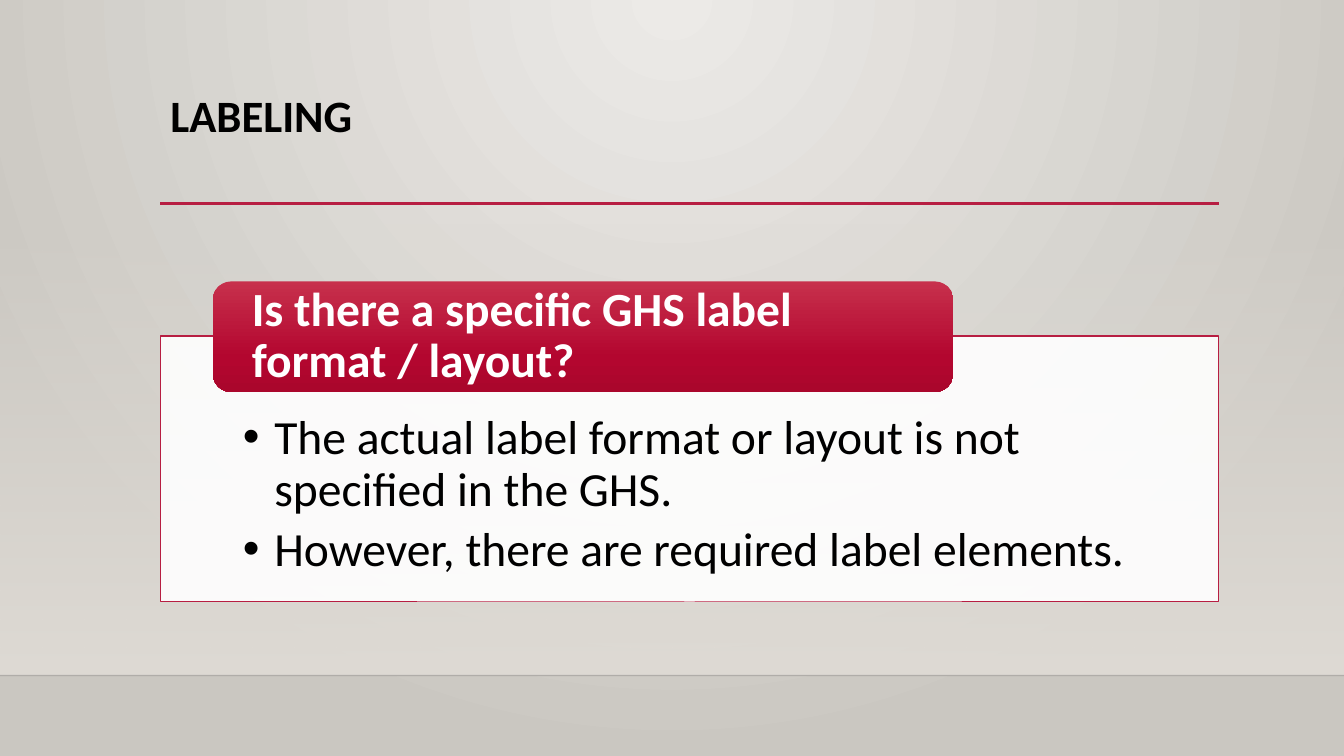
from lxml.etree import SubElement
from pptx import Presentation
from pptx.dml.color import RGBColor
from pptx.enum.shapes import MSO_CONNECTOR, MSO_SHAPE
from pptx.enum.text import MSO_ANCHOR, MSO_AUTO_SIZE, PP_ALIGN
from pptx.oxml.ns import qn
from pptx.util import Pt

WIDTH, HEIGHT = 960, 540
CRIMSON, WHITE, BLACK = "B71E42", "FFFFFF", "000000"


def color(hex_value):
    """Turn a hex string into a colour."""
    return RGBColor.from_string(hex_value)


def set_alpha(element, percent):
    """Make the first colour of an element partly transparent."""
    tint = element.xpath(".//a:srgbClr")[0]
    SubElement(tint, qn("a:alpha"), val=str(percent * 1000))


def set_gradient(fill, owner, stops):
    """Fill with (position, colour, opacity) stops and return the gradient."""
    fill.gradient()
    gradient = owner.xpath(".//a:gradFill")[0]
    gradient.clear()
    stop_list = SubElement(gradient, qn("a:gsLst"))
    for position, hex_value, opacity in stops:
        stop = SubElement(stop_list, qn("a:gs"), pos=str(position * 1000))
        SubElement(stop, qn("a:srgbClr"), val=hex_value)
        set_alpha(stop, opacity)
    return gradient


def set_vertical_gradient(shape, stops):
    """Fill a shape with a gradient from top to bottom."""
    gradient = set_gradient(shape.fill, shape.element, stops)
    SubElement(gradient, qn("a:lin"), ang="5400000", scaled="0")


def set_backdrop(slide):
    """Give the slide a radial glow from its top centre."""
    stops = [(0, "ECEAE7", 100), (100, "CAC7C1", 100)]
    gradient = set_gradient(slide.background.fill, slide.element, stops)
    glow = SubElement(gradient, qn("a:path"), path="circle")
    SubElement(glow, qn("a:fillToRect"), l="43000", t="0", r="43000", b="100000")


def add_box(slide, kind, left, top, width, height):
    """Add a shape without shadow or outline."""
    box = slide.shapes.add_shape(kind, Pt(left), Pt(top), Pt(width), Pt(height))
    box.shadow.inherit = False
    box.line.fill.background()
    return box


def add_rule(slide, left, right, y, hex_value, weight):
    """Add a horizontal line without shadow."""
    rule = slide.shapes.add_connector(
        MSO_CONNECTOR.STRAIGHT, Pt(left), Pt(y), Pt(right), Pt(y))
    rule.line.color.rgb = color(hex_value)
    rule.line.width = Pt(weight)
    SubElement(rule.element.spPr, qn("a:effectLst"))
    return rule


def add_bullet(paragraph):
    """Give a paragraph a round bullet and a hanging indent."""
    properties = paragraph._p.get_or_add_pPr()
    properties.set("marL", str(Pt(22.5)))
    properties.set("indent", str(-Pt(22.5)))
    SubElement(properties, qn("a:buFont"), typeface="Arial")
    SubElement(properties, qn("a:buChar"), char="•")


def write(shape, lines, insets, anchor, size, hex_value, bold=False, bullets=False):
    """Write left-aligned paragraphs into a shape."""
    frame = shape.text_frame
    left, top, right, bottom = map(Pt, insets)
    frame_format = {
        "margin_left": left, "margin_top": top,
        "margin_right": right, "margin_bottom": bottom,
        "word_wrap": True, "auto_size": MSO_AUTO_SIZE.NONE,
        "vertical_anchor": anchor,
    }
    for name, value in frame_format.items():
        setattr(frame, name, value)
    frame.text = "\n".join(lines)
    font_format = {"name": "Calibri", "size": Pt(size), "bold": bold}
    for paragraph in frame.paragraphs:
        paragraph.alignment = PP_ALIGN.LEFT
        paragraph.line_spacing = 0.9
        paragraph.space_after = Pt(6 if bullets else 0)
        if bullets:
            add_bullet(paragraph)
        for run in paragraph.runs:
            for name, value in font_format.items():
                setattr(run.font, name, value)
            run.font.color.rgb = color(hex_value)


def add_heading(slide, words):
    """Place and format the slide title."""
    title = slide.shapes.title
    place = {"left": 114.5, "top": 63.5, "width": 756, "height": 82.5}
    for name, value in place.items():
        setattr(title, name, Pt(value))
    write(title, [words], (7.2, 3.6, 7.2, 3.6), MSO_ANCHOR.TOP, 32, BLACK, bold=True)


def add_answer(slide, lines):
    """Add the white panel with the bulleted answer."""
    panel = add_box(slide, MSO_SHAPE.RECTANGLE, 114.5, 240, 756, 190)
    panel.fill.solid()
    panel.fill.fore_color.rgb = color(WHITE)
    set_alpha(panel.element, 90)
    panel.line.color.rgb = color(CRIMSON)
    panel.line.width = Pt(0.75)
    write(panel, lines, (59, 55.5, 59, 18.5), MSO_ANCHOR.TOP, 34, BLACK, bullets=True)


def add_question(slide, words):
    """Add the crimson tab with the question."""
    tab = add_box(slide, MSO_SHAPE.ROUNDED_RECTANGLE, 152, 201, 529, 79)
    set_vertical_gradient(
        tab, [(0, "C7304C", 100), (69, "B3062F", 100), (100, "AA062C", 100)])
    write(tab, [words], (24, 0, 24, 0), MSO_ANCHOR.MIDDLE, 34, WHITE, bold=True)


def main():
    """Build and save the slide."""
    deck = Presentation()
    deck.slide_width, deck.slide_height = Pt(WIDTH), Pt(HEIGHT)
    slide = deck.slides.add_slide(deck.slide_layouts[5])
    set_backdrop(slide)
    wall = add_box(slide, MSO_SHAPE.RECTANGLE, 0, 159, WIDTH, 323.5)
    set_vertical_gradient(wall, [(0, "DFDBD5", 0), (100, "DFDBD5", 100)])
    floor_edge = add_rule(slide, 0, WIDTH, 482.5, "000001", 1)
    set_alpha(floor_edge.element, 20)
    add_rule(slide, 114.5, 871, 145.25, CRIMSON, 2.5)
    add_heading(slide, "LABELING")
    add_answer(slide, [
        "The actual label format or layout is not specified in the GHS.",
        "However, there are required label elements.",
    ])
    add_question(slide, "Is there a specific GHS label format / layout?")
    deck.save("out.pptx")


if __name__ == "__main__":
    main()
